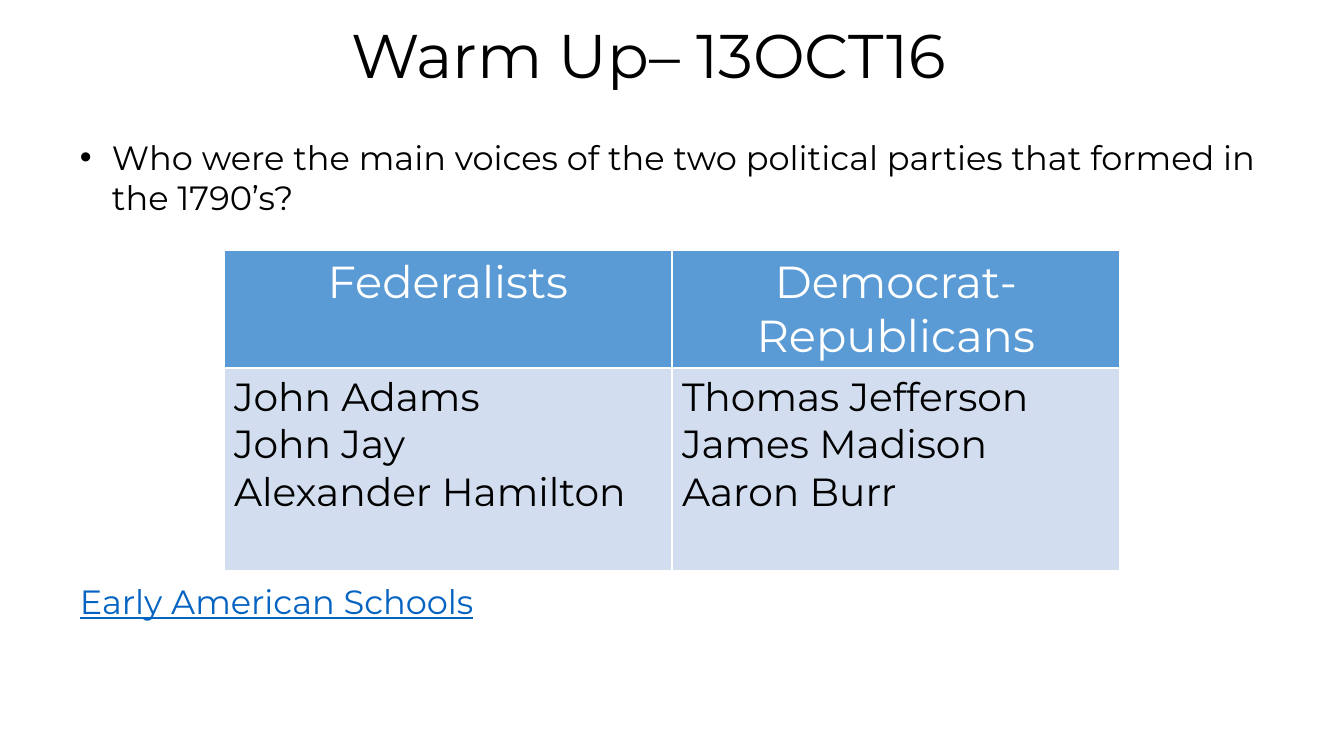
from lxml import etree
from pptx import Presentation
from pptx.dml.color import RGBColor
from pptx.enum.text import MSO_ANCHOR, PP_ALIGN
from pptx.oxml.ns import qn
from pptx.util import Pt

EMU_PER_PX = 914400 / 100.8
FONT = "Montserrat"
LEFT, CENTER = PP_ALIGN.LEFT, PP_ALIGN.CENTER
TOP, MIDDLE = MSO_ANCHOR.TOP, MSO_ANCHOR.MIDDLE

BLACK = RGBColor(0x00, 0x00, 0x00)
WHITE = RGBColor(0xFF, 0xFF, 0xFF)
HEADER_BLUE = RGBColor(0x5B, 0x9B, 0xD5)
BODY_BLUE = RGBColor(0xD2, 0xDE, 0xEF)
LINK_BLUE = RGBColor(0x05, 0x63, 0xC1)

PARTIES = {
    "Federalists": ["John Adams", "John Jay", "Alexander Hamilton"],
    "Democrat-Republicans": ["Thomas Jefferson", "James Madison", "Aaron Burr"],
}


def px(n):
    return round(n * EMU_PER_PX)


def set_text(tf, lines, size, color, align=LEFT):
    tf.text = "\n".join(lines)
    for p in tf.paragraphs:
        p.alignment = align
        for r in p.runs:
            r.font.name = FONT
            r.font.size = Pt(size)
            r.font.bold = False
            r.font.color.rgb = color


def add_text(slide, box, text, size, color=BLACK, align=LEFT, anchor=TOP):
    tf = slide.shapes.add_textbox(*map(px, box)).text_frame
    tf.word_wrap = True
    tf.vertical_anchor = anchor
    set_text(tf, [text], size, color, align)
    return tf.paragraphs[0]


def add_bullet(p, indent):
    pPr = p._p.get_or_add_pPr()
    pPr.set("marL", str(px(indent)))
    pPr.set("indent", str(-px(indent)))
    etree.SubElement(pPr, qn("a:buFont"), typeface="Arial")
    etree.SubElement(pPr, qn("a:buChar"), char="•")


def set_borders(cell, color, width):
    tcPr = cell._tc.get_or_add_tcPr()
    for side in ("lnL", "lnR", "lnT", "lnB"):
        ln = etree.SubElement(tcPr, qn(f"a:{side}"), w=str(Pt(width)))
        fill = etree.SubElement(ln, qn("a:solidFill"))
        etree.SubElement(fill, qn("a:srgbClr"), val=str(color))


def fill_cell(cell, lines, size, color, fill, align=LEFT):
    set_text(cell.text_frame, lines, size, color, align)
    set_borders(cell, WHITE, 1)
    cell.fill.solid()
    cell.fill.fore_color.rgb = fill


def add_party_table(slide, left, top, col_width, row_heights):
    cols, rows = len(PARTIES), len(row_heights)
    box = (left, top, col_width * cols, sum(row_heights))
    table = slide.shapes.add_table(rows, cols, *map(px, box)).table
    for row, height in zip(table.rows, row_heights):
        row.height = px(height)
    for i, (party, voices) in enumerate(PARTIES.items()):
        table.columns[i].width = px(col_width)
        fill_cell(table.cell(0, i), [party], 32, WHITE, HEADER_BLUE, CENTER)
        fill_cell(table.cell(1, i), voices, 28, BLACK, BODY_BLUE)


def main():
    prs = Presentation()
    prs.slide_width, prs.slide_height = px(1344), px(756)
    slide = prs.slides.add_slide(prs.slide_layouts[6])

    # Title
    title = add_text(slide, (47, -14, 1204, 146), "Warm Up– 13OCT16", 44,
                     align=CENTER, anchor=MIDDLE)
    title.line_spacing = 0.9

    # Question
    question = add_text(
        slide, (70, 132, 1239, 204),
        "Who were the main voices of the two political parties that formed in the 1790’s?", 24)
    add_bullet(question, 32)

    # Parties and their voices
    add_party_table(slide, 224, 250, 448, (118, 203))

    # Reading title, styled as a link
    reading = add_text(slide, (70, 576, 1216, 50), "Early American Schools", 24, LINK_BLUE)
    reading.runs[0].font.underline = True

    prs.save("out.pptx")


if __name__ == "__main__":
    main()
